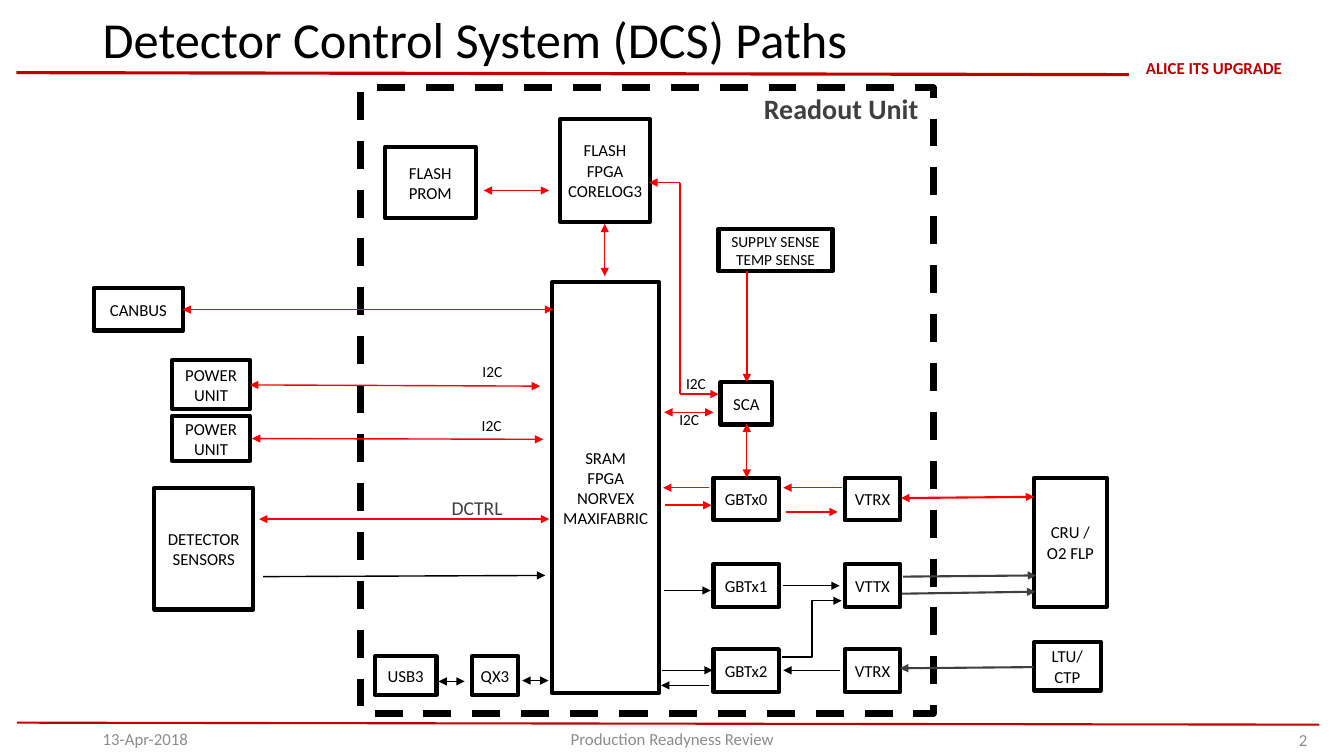
from dataclasses import dataclass

from pptx import Presentation
from pptx.dml.color import RGBColor
from pptx.enum.dml import MSO_LINE
from pptx.enum.shapes import MSO_CONNECTOR, MSO_SHAPE
from pptx.enum.text import MSO_ANCHOR, PP_ALIGN
from pptx.oxml.ns import qn
from pptx.oxml.xmlchemy import OxmlElement
from pptx.util import Cm, Pt

STRAIGHT, ELBOW = MSO_CONNECTOR.STRAIGHT, MSO_CONNECTOR.ELBOW
RECTANGLE, DASH = MSO_SHAPE.RECTANGLE, MSO_LINE.DASH
LEFT, CENTER, RIGHT = PP_ALIGN.LEFT, PP_ALIGN.CENTER, PP_ALIGN.RIGHT
TOP, MIDDLE = MSO_ANCHOR.TOP, MSO_ANCHOR.MIDDLE
FORWARD, BOTH = ("tailEnd",), ("headEnd", "tailEnd")


@dataclass(frozen=True)
class Theme:
    font: str = "Calibri"
    ink: RGBColor = RGBColor(0, 0, 0)
    brand: RGBColor = RGBColor(0xC0, 0, 0)
    control: RGBColor = RGBColor(0xFF, 0, 0)
    dark: RGBColor = RGBColor(0x3F, 0x3F, 0x3F)
    muted: RGBColor = RGBColor(0x8C, 0x8C, 0x8C)
    title: int = 36
    heading: int = 20
    signal: int = 14
    body: int = 12
    small: int = 11


THEME = Theme()

BLOCKS = [
    ("CANBUS", 2.36, 7.26, 2.26, 1.07),
    ("FLASH\nPROM", 9.7, 3.71, 2.29, 1.78),
    ("FLASH\nFPGA\nCORELOG3", 14.12, 3, 2.26, 2.59),
    ("SCA", 18.16, 9.63, 1.3, 1.07),
    ("LTU/\nCTP", 26.06, 16.18, 1.68, 1.22),
    ("CRU /\nO2 FLP", 26.06, 12.04, 1.83, 3.25),
    ("POWER\nUNIT", 4.34, 9.07, 1.96, 1.24),
    ("POWER\nUNIT", 4.34, 10.49, 1.96, 1.12),
    ("DETECTOR\nSENSORS", 3.89, 12.29, 2.49, 3.07),
    ("SRAM\nFPGA\nNORVEX\nMAXIFABRIC", 13.92, 7.11, 2.69, 10.36),
    ("USB3", 9.45, 16.54, 1.55, 0.97),
    ("QX3", 11.89, 16.54, 1.17, 0.97),
]
LINK_ROWS = [("GBTx0", "VTRX", 12.04), ("GBTx1", "VTTX", 14.22),
             ("GBTx2", "VTRX", 16.36)]

CONTROL_ONE_WAY = [
    (21.21, 12.29, 19.74, 12.29), (19.81, 12.9, 21.11, 12.9),
    (17.86, 12.29, 16.71, 12.29), (16.76, 12.73, 17.93, 12.73),
    (17.14, 4.6, 16.36, 4.6), (17.14, 9.93, 18.11, 9.93),
]
CONTROL_TWO_WAY = [
    (17.98, 10.39, 16.74, 10.39), (12.19, 4.8, 13.84, 4.8),
    (15.24, 6.96, 15.24, 5.64), (4.6, 7.8, 13.94, 7.8),
    (6.3, 9.7, 13.61, 9.73), (6.35, 11.05, 13.69, 11.07),
    (6.53, 13.08, 13.84, 13.08), (18.82, 12.04, 18.82, 10.67),
]
DATA_ONE_WAY = [
    (16.74, 14.88, 17.91, 14.88), (16.69, 16.89, 17.96, 16.89),
    (17.88, 17.27, 16.66, 17.27), (21.18, 16.89, 19.74, 16.89),
    (19.74, 14.76, 21.16, 14.76), (6.63, 14.53, 13.74, 14.5),
]
DATA_TWO_WAY = [(13.16, 17.15, 13.82, 17.15), (11.05, 17.17, 11.71, 17.17)]
OPTICAL_LINKS = [
    (26.04, 16.81, 22.68, 16.84), (22.76, 14.53, 26.11, 14.5),
    (22.73, 14.96, 26.09, 14.91),
]
PATH_GROUPS = [
    (CONTROL_ONE_WAY, THEME.control, 1, FORWARD),
    (CONTROL_TWO_WAY, THEME.control, 1, BOTH),
    ([(17.14, 4.6, 17.14, 9.93)], THEME.control, 1, ()),
    ([(18.82, 6.83, 18.82, 9.63)], THEME.control, 1.5, FORWARD),
    ([(22.71, 12.55, 26.06, 12.52)], THEME.control, 1.5, BOTH),
    (DATA_ONE_WAY, THEME.ink, 1, FORWARD),
    (DATA_TWO_WAY, THEME.ink, 1, BOTH),
    (OPTICAL_LINKS, THEME.dark, 1.5, FORWARD),
]
I2C_LABELS = [(16.87, 10.21), (17.04, 9.3), (11.91, 8.99), (11.89, 10.36)]


def write(frame, text, size, color, align=LEFT, anchor=MIDDLE, bold=False,
          inset=(0.25, 0.13), wrap=True):
    frame.word_wrap = wrap
    frame.vertical_anchor = anchor
    frame.margin_left = frame.margin_right = Cm(inset[0])
    frame.margin_top = frame.margin_bottom = Cm(inset[1])
    paragraph = frame.paragraphs[0]
    paragraph.text = text
    paragraph.alignment = align
    font = paragraph.font
    font.name, font.size, font.bold = THEME.font, Pt(size), bold
    font.color.rgb = color
    return paragraph


def add_label(slide, text, left, top, width, height, size, color, **style):
    label = slide.shapes.add_textbox(Cm(left), Cm(top), Cm(width), Cm(height))
    return write(label.text_frame, text, size, color, **style)


def add_outline(slide, left, top, width, height, weight):
    outline = slide.shapes.add_shape(RECTANGLE, Cm(left), Cm(top), Cm(width), Cm(height))
    outline.shadow.inherit = False
    outline.fill.background()
    outline.line.color.rgb = THEME.ink
    outline.line.width = Pt(weight)
    return outline


def add_block(slide, text, left, top, width, height, size=THEME.body):
    block = add_outline(slide, left, top, width, height, 3)
    write(block.text_frame, text, size, THEME.ink, align=CENTER, inset=(0, 0))


def add_path(slide, ends, color, weight, arrows=(), kind=STRAIGHT):
    link = slide.shapes.add_connector(kind, *(Cm(end) for end in ends))
    link.line.color.rgb = color
    link.line.width = Pt(weight)
    properties = link._element.spPr
    for arrow in arrows:
        arrowhead = OxmlElement(f"a:{arrow}")
        arrowhead.set("type", "triangle")
        properties.find(qn("a:ln")).append(arrowhead)
    properties.append(OxmlElement("a:effectLst"))


def add_page_furniture(slide):
    add_path(slide, (0.41, 1.83, 28.45, 1.88), THEME.brand, 2.25)
    add_path(slide, (33.25, 18.26, 0.43, 18.21), THEME.brand, 1.5)
    add_label(slide, "ALICE ITS UPGRADE", 28.78, 1.47, 3.63, 0.48, THEME.body,
              THEME.brand, align=CENTER, bold=True, inset=(0, 0))
    title = add_label(slide, "Detector Control System (DCS) Paths",
                      2.34, 0.15, 26.11, 1.83, THEME.title, THEME.ink)
    title.line_spacing = 0.9
    for text, left, top, width, align in [
        ("13-Apr-2018", 2.34, 18.26, 7.62, LEFT),
        ("Production Readyness Review", 11.23, 18.26, 11.43, CENTER),
        ("2", 29.34, 18.29, 3.86, RIGHT),
    ]:
        add_label(slide, text, left, top, width, 0.71, THEME.body, THEME.muted,
                  align=align)


def main():
    deck = Presentation()
    deck.slide_width, deck.slide_height = Cm(33.87), Cm(19.05)
    slide = deck.slides.add_slide(deck.slide_layouts[6])
    add_page_furniture(slide)

    for block in BLOCKS:
        add_block(slide, *block)
    add_block(slide, "SUPPLY SENSE\nTEMP SENSE", 18.11, 5.77, 2.87, 1.07, THEME.small)
    for transceiver, optics, top in LINK_ROWS:
        add_block(slide, transceiver, 17.98, top, 1.65, 1.07)
        add_block(slide, optics, 21.29, top, 1.4, 1.07)

    readout_unit = add_outline(slide, 9.09, 2.21, 14.43, 15.77, 5)
    readout_unit.line.dash_style = DASH

    for paths, color, weight, arrows in PATH_GROUPS:
        for ends in paths:
            add_path(slide, ends, color, weight, arrows)
    add_path(slide, (19.71, 16.56, 21.21, 15.14), THEME.ink, 1, FORWARD, ELBOW)

    for left, top in I2C_LABELS:
        add_label(slide, "I2C", left, top, 1.02, 0.74, THEME.small, THEME.ink,
                  anchor=TOP, wrap=False)
    add_label(slide, "Readout Unit", 19.15, 2.29, 4.27, 0.86, THEME.heading,
              THEME.dark, bold=True, inset=(0.1, 0.1))
    add_label(slide, "DCTRL", 11.28, 12.4, 1.78, 0.79, THEME.signal,
              THEME.dark, inset=(0.1, 0.1))
    deck.save("out.pptx")


if __name__ == "__main__":
    main()
